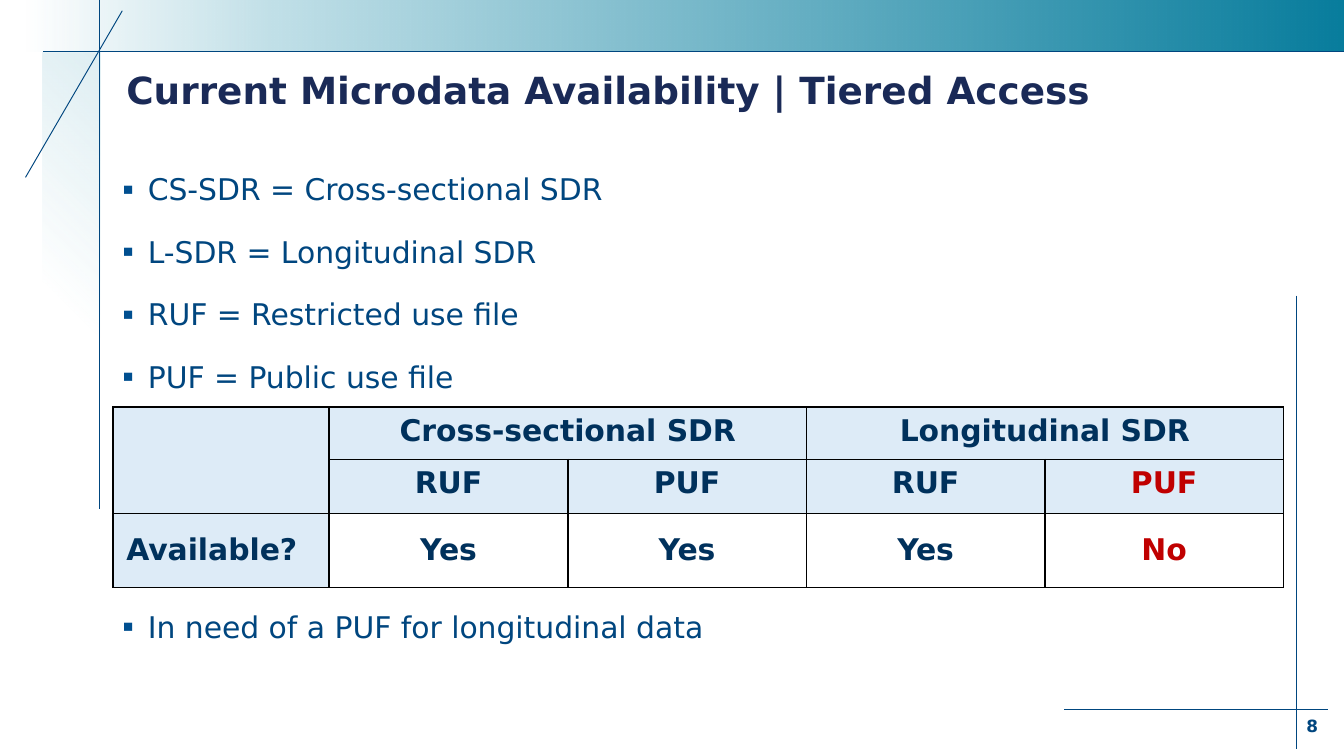
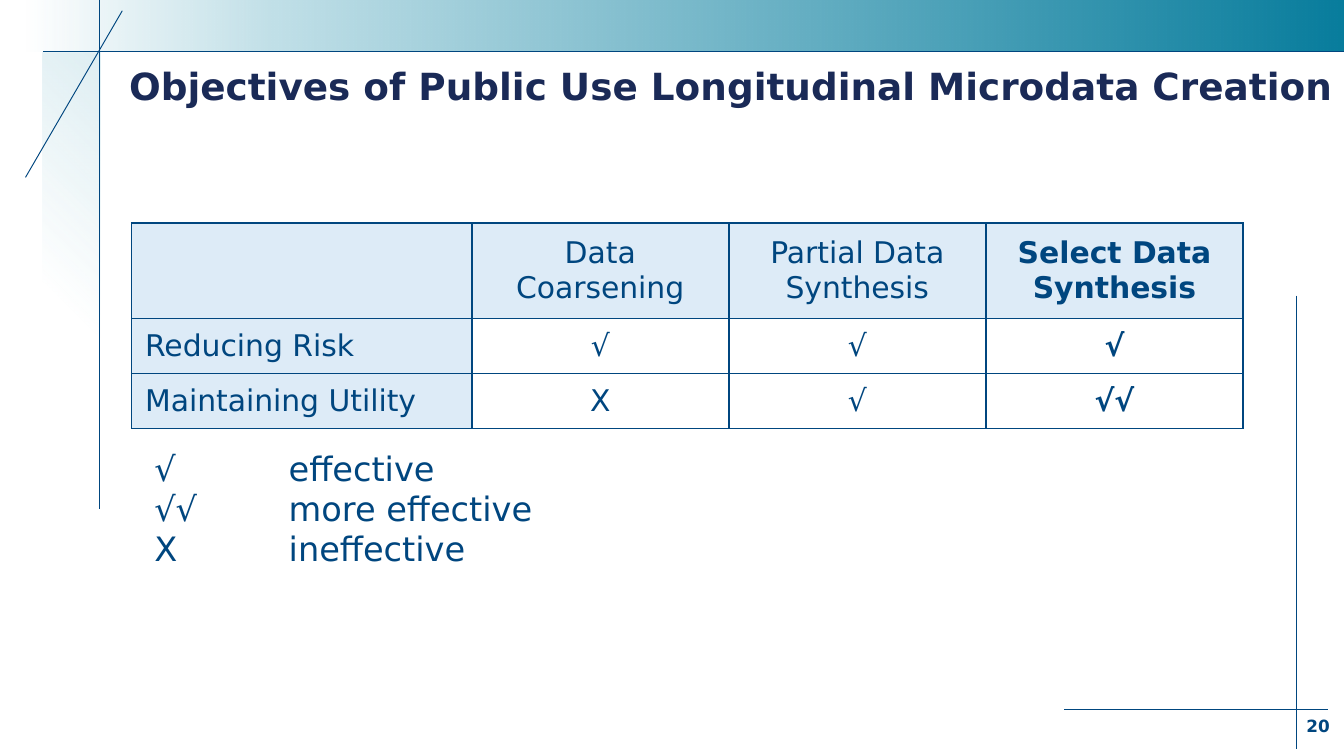
"""Build two slides on access to survey microdata and the aims of public use files."""
from pptx import Presentation
from pptx import util as u
from pptx.dml.color import RGBColor
from pptx.enum import shapes, text
from pptx.oxml import parse_xml
from pptx.oxml.ns import nsdecls, qn

INK = {"title": "1A2A57", "body": "00467F", "bullet": "004F90", "dark": "00315C",
       "red": "C00000", "pale": "DDEBF7", "mist": "C1E0E8", "teal": "087D9D", "grid": "000000"}
FONT = "DejaVu Sans"
NS = nsdecls("a")
LEFT, MID = text.PP_ALIGN.LEFT, text.PP_ALIGN.CENTER
TOP, CENTRE = text.MSO_ANCHOR.TOP, text.MSO_ANCHOR.MIDDLE


def write(frame, words, size=16, color="body", bold=False, align=LEFT, anchor=TOP,
          line=None, before=0, after=0, marks=(), hang=None):
    """Fill a text frame with one paragraph for each line of words."""
    frame.word_wrap = True
    frame.vertical_anchor = anchor
    for i, part in enumerate(words.split("\n")):
        para = frame.paragraphs[0] if i == 0 else frame.add_paragraph()
        props = para._p.get_or_add_pPr()
        if hang:
            props.set("marL", str(u.Inches(hang[0])))
            props.set("indent", str(u.Inches(hang[1])))
        for mark in marks:
            props.append(parse_xml(mark))
        para.alignment = align
        para.line_spacing = line
        para.space_before = u.Pt(before if i else 0)
        para.space_after = u.Pt(after)
        run = para.add_run()
        run.text = part
        font = run.font
        font.name, font.size, font.bold = FONT, u.Pt(size), bold
        font.color.rgb = RGBColor.from_string(INK[color])


def grid(slide, rows, left, top, width, first, heights, heads, edge):
    """Add a ruled table with pale header rows and a pale first column."""
    count = len(rows[0])
    table = slide.shapes.add_table(len(rows), count, u.Inches(left), u.Inches(top),
                                   u.Inches(width), u.Inches(sum(heights))).table
    table.first_row = table.horz_banding = False
    for c, col in enumerate(table.columns):
        col.width = u.Inches(first if c == 0 else (width - first) / (count - 1))
    for r, row in enumerate(rows):
        table.rows[r].height = u.Inches(heights[r])
        for c in range(count):
            cell = table.cell(r, c)
            props = cell._tc.get_or_add_tcPr()
            for side in "LRTB":
                props.append(parse_xml(
                    f'<a:ln{side} {NS} w="12700"><a:solidFill><a:srgbClr val="{INK[edge]}"/>'
                    f'</a:solidFill></a:ln{side}>'))
            if r < heads or c == 0:
                cell.fill.solid()
                cell.fill.fore_color.rgb = RGBColor.from_string(INK["pale"])
            else:
                cell.fill.background()
    return table


deck = Presentation()
deck.slide_width, deck.slide_height = u.Inches(10), u.Inches(10 * 9 / 16)

BANDS = [((0.32, 0.39, 0.43, 3.53), [(46, "mist", 0), (100, "mist", 53)], 135),
         ((0.19, 0, 9.81, 0.38), [(0, "mist", 0), (19, "mist", 100), (100, "teal", 100)], 0)]
LINES = [(9.65, 2.2, 9.65, 5.57), (7.92, 5.28, 9.88, 5.28), (0.74, 0, 0.74, 3.79),
         (0.32, 0.38, 10, 0.38), (0.19, 1.32, 0.91, 0.08)]
PAGES = [(1, "Current Microdata Availability | Tiered Access", (0.84, 0.49, 9.18, 0.58), "8"),
         (5, "Objectives of Public Use Longitudinal Microdata Creation",
          (0.86, 0.46, 9.32, 0.56), "20")]

for layout, head, spot, page in PAGES:
    slide = deck.slides.add_slide(deck.slide_layouts[layout])
    for box, stops, angle in BANDS:
        band = slide.shapes.add_shape(shapes.MSO_SHAPE.RECTANGLE, *map(u.Inches, box))
        band.shadow.inherit = False
        band.line.fill.background()
        band.fill.gradient()
        band.fill.gradient_angle = angle
        ramp = band._element.spPr.find(".//" + qn("a:gsLst"))
        ramp.clear()
        for pos, tint, alpha in stops:
            ramp.append(parse_xml(
                f'<a:gs {NS} pos="{pos * 1000}"><a:srgbClr val="{INK[tint]}">'
                f'<a:alpha val="{alpha * 1000}"/></a:srgbClr></a:gs>'))
        if angle:
            band._element.spPr.xfrm.set("flipH", "1")
    for ends in LINES:
        rule = slide.shapes.add_connector(shapes.MSO_CONNECTOR.STRAIGHT, *map(u.Inches, ends))
        rule.line.color.rgb = RGBColor.from_string(INK["body"])
        rule.line.width = u.Pt(0.5)
        rule._element.spPr.append(parse_xml(f"<a:effectLst {NS}/>"))
    title = slide.shapes.title
    title.left, title.top, title.width, title.height = map(u.Inches, spot)
    title.text_frame.auto_size = text.MSO_AUTO_SIZE.NONE
    write(title.text_frame, head, size=20, color="title", bold=True, line=0.9)
    num = slide.shapes.add_textbox(*map(u.Inches, (9.72, 5.25, 0.35, 0.3))).text_frame
    num.margin_left = 0
    write(num, page, size=9, bold=True, anchor=CENTRE)

access, aims = deck.slides

body = access.placeholders[1]
body.left, body.top, body.width, body.height = map(u.Inches, (0.74, 1.21, 8.9, 3.91))
body.text_frame.auto_size = text.MSO_AUTO_SIZE.NONE
BULLET = [f'<a:buClr {NS}><a:srgbClr val="{INK["bullet"]}"/></a:buClr>',
          f'<a:buSzPct {NS} val="110000"/>', f'<a:buChar {NS} char="▪"/>']
write(body.text_frame, "CS-SDR = Cross-sectional SDR\nL-SDR = Longitudinal SDR\n"
      "RUF = Restricted use file\nPUF = Public use file\nIn need of a PUF for longitudinal data",
      line=u.Pt(20), before=7.5, after=6, marks=BULLET, hang=(0.26, -0.19))
body.text_frame.paragraphs[-1].space_before = u.Pt(108)

rows = [["", "Cross-sectional SDR", "", "Longitudinal SDR", ""],
        ["", "RUF", "PUF", "RUF", "PUF"],
        ["Available?", "Yes", "Yes", "Yes", "No"]]
table = grid(access, rows, 0.84, 3.03, 8.71, 1.61, [0.39, 0.39, 0.55], 2, "grid")
for start, end in [((0, 0), (1, 0)), ((0, 1), (0, 2)), ((0, 3), (0, 4))]:
    table.cell(*start).merge(table.cell(*end))
for r, row in enumerate(rows):
    for c, word in enumerate(row):
        if word:
            cell = table.cell(r, c)
            write(cell.text_frame, word, color="red" if c == 4 else "dark", bold=True,
                  align=MID if c else LEFT)
            cell.vertical_anchor = CENTRE if r == 2 else TOP

rows = [["", "Data Coarsening", "Partial Data Synthesis", "Select Data Synthesis"],
        ["Reducing Risk", "√", "√", "√"],
        ["Maintaining Utility", "X", "√", "√√"]]
table = grid(aims, rows, 0.98, 1.66, 8.27, 2.53, [0.71, 0.41, 0.41], 1, "body")
for r, row in enumerate(rows):
    for c, word in enumerate(row):
        if word:
            cell = table.cell(r, c)
            write(cell.text_frame, word, bold=c == 3, align=MID if c else LEFT)
            cell.vertical_anchor = CENTRE

key = aims.shapes.add_textbox(*map(u.Inches, (1.05, 3.28, 6.83, 1.01)))
TAB = f'<a:tabLst {NS}><a:tab pos="{u.Inches(1)}" algn="l"/></a:tabLst>'
write(key.text_frame, "√\teffective\n√√\tmore effective\nX\tineffective", size=18, marks=[TAB])

deck.save("out.pptx")
